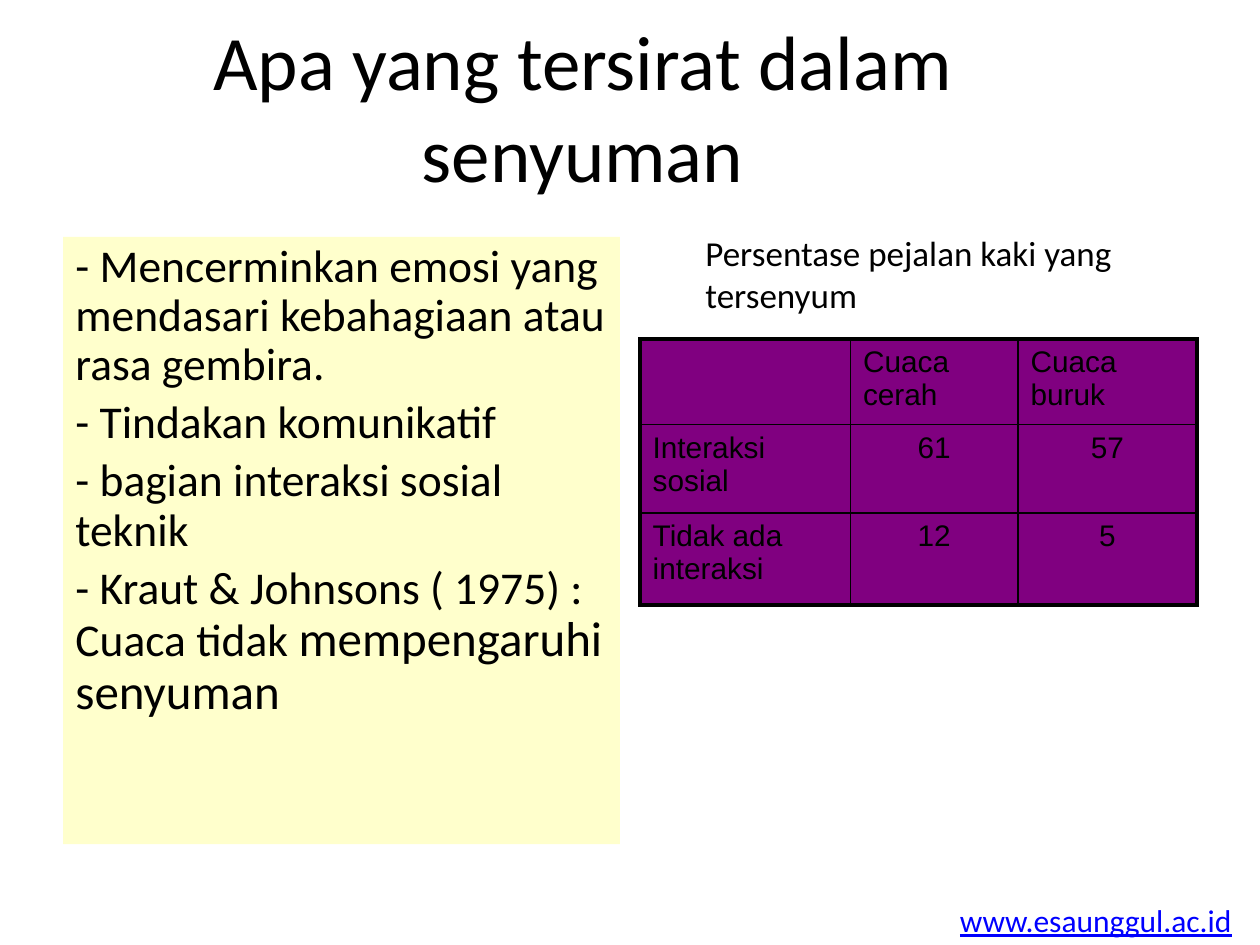
from lxml import etree
from pptx import Presentation
from pptx.dml.color import RGBColor
from pptx.enum.text import MSO_ANCHOR, PP_ALIGN
from pptx.oxml.ns import qn
from pptx.util import Inches, Pt

COLORS = {"text": "000000", "link": "0000FF", "panel": "FFFFCC",
          "cell": "800080", "border": "000000"}


def style_font(font, size, color="text", name="Calibri"):
    font.name = name
    font.size = Pt(size)
    font.color.rgb = RGBColor.from_string(COLORS[color])


def add_border(cell, side, width):
    properties = cell._tc.get_or_add_tcPr()
    line = etree.SubElement(properties, qn(f"a:ln{side}"), w=str(Pt(width)))
    fill = etree.SubElement(line, qn("a:solidFill"))
    etree.SubElement(fill, qn("a:srgbClr"), val=COLORS["border"])


presentation = Presentation()
presentation.slide_width = Inches(10)
presentation.slide_height = Inches(7.5)
slide = presentation.slides.add_slide(presentation.slide_layouts[6])

# Title, table caption and web address
labels = [
    ("Apa yang tersirat dalam senyuman", (0.5, 0.13, 8.25, 1.42), 44, "text"),
    ("Persentase pejalan kaki yang tersenyum", (5.5, 1.79, 3.75, 0.77), 20, "text"),
    ("www.esaunggul.ac.id", (7.52, 7.1, 2.38, 0.4), 18, "link"),
]
for text, place, size, color in labels:
    box = slide.shapes.add_textbox(*[Inches(value) for value in place])
    is_title = size == 44
    is_link = color == "link"
    box.text_frame.word_wrap = not is_link
    if is_title:
        box.text_frame.vertical_anchor = MSO_ANCHOR.MIDDLE
    paragraph = box.text_frame.paragraphs[0]
    run = paragraph.add_run()
    run.text = text
    if is_title:
        paragraph.alignment = PP_ALIGN.CENTER
    style_font(run.font, size, color)
    if is_link:
        run.font.underline = True

# Yellow panel with the main points
panel = slide.shapes.add_textbox(Inches(0.5), Inches(1.88), Inches(4.42), Inches(4.82))
panel.fill.solid()
panel.fill.fore_color.rgb = RGBColor.from_string(COLORS["panel"])
panel.text_frame.word_wrap = True
points = [
    [("- Mencerminkan emosi yang mendasari kebahagiaan atau rasa gembira.", 26)],
    [("- Tindakan komunikatif", 26)],
    [("- bagian interaksi sosial teknik", 26)],
    [("- Kraut & Johnsons ( 1975) : Cuaca tidak ", 26), ("mempengaruhi senyuman", 28)],
]
for index, pieces in enumerate(points):
    if index == 0:
        paragraph = panel.text_frame.paragraphs[0]
    else:
        paragraph = panel.text_frame.add_paragraph()
        paragraph.space_before = Pt(5.2)
    paragraph.line_spacing = 0.9
    for text, size in pieces:
        run = paragraph.add_run()
        run.text = text
        style_font(run.font, size)

# Table of smiling pedestrians
rows = [
    ["", "Cuaca cerah", "Cuaca buruk"],
    ["Interaksi sosial", "61", "57"],
    ["Tidak ada interaksi", "12", "5"],
]
column_widths = [1.67, 1.33, 1.42]
row_heights = [0.68, 0.7, 0.73]
table = slide.shapes.add_table(3, 3, Inches(5.08), Inches(2.69),
                               Inches(4.42), Inches(2.11)).table
for column, width in zip(table.columns, column_widths):
    column.width = Inches(width)
for row, height in zip(table.rows, row_heights):
    row.height = Inches(height)

for row_index, row in enumerate(rows):
    for column_index, text in enumerate(row):
        cell = table.cell(row_index, column_index)
        cell.text = text
        paragraph = cell.text_frame.paragraphs[0]
        style_font(paragraph.font, 17, name="Arial")
        if text.isdigit():
            paragraph.alignment = PP_ALIGN.CENTER
        # Thick lines on the outer edge, thin ones inside
        outer_sides = {"L": column_index == 0, "R": column_index == 2,
                       "T": row_index == 0, "B": row_index == 2}
        for side, is_outer in outer_sides.items():
            add_border(cell, side, 2.25 if is_outer else 1)
        cell.fill.solid()
        cell.fill.fore_color.rgb = RGBColor.from_string(COLORS["cell"])

presentation.save("out.pptx")
